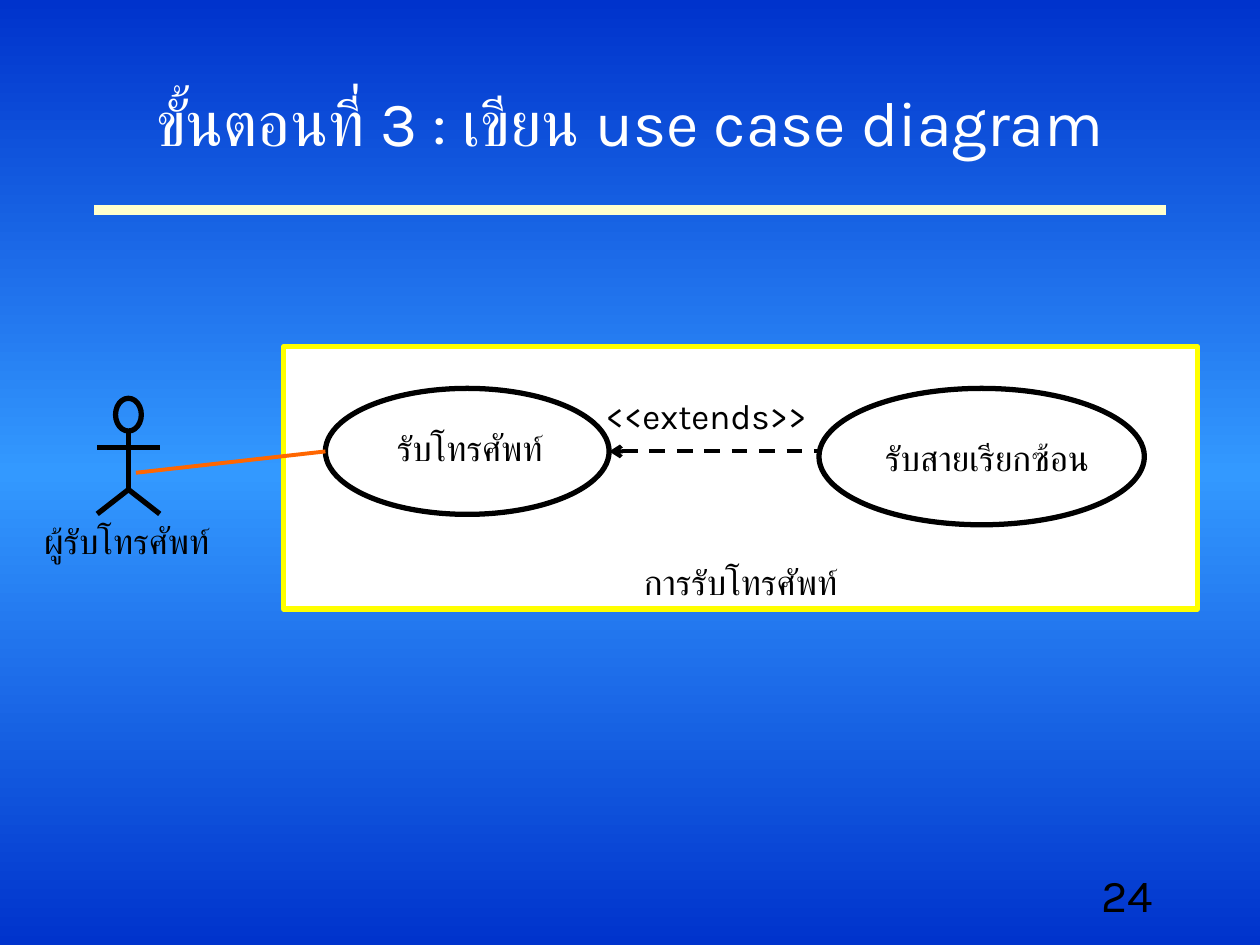
from copy import deepcopy
from pptx import Presentation
from pptx.dml.color import RGBColor
from pptx.enum.dml import MSO_LINE
from pptx.enum.shapes import MSO_CONNECTOR, MSO_SHAPE
from pptx.enum.text import MSO_ANCHOR, PP_ALIGN
from pptx.oxml.ns import qn
from pptx.util import Cm, Pt
from lxml.etree import SubElement

HUE = {"edge": "0033CC", "mid": "3399FF", "rule": "FFFFCC", "ink": "000000",
       "paper": "FFFFFF", "frame": "FFFF00", "link": "FF6600"}


def put(shape, text, size=20, hue="ink", align=PP_ALIGN.CENTER, wrap=False):
    frame = shape.text_frame
    frame.word_wrap = wrap
    para = frame.paragraphs[0]
    para.alignment = align
    run = para.add_run()
    run.text = text
    run.font.name = "Karla"
    run.font.size = Pt(size)
    run.font.color.rgb = RGBColor.from_string(HUE[hue])


def draw(x1, y1, x2, y2, hue="ink", width=3):
    line = slide.shapes.add_connector(
        MSO_CONNECTOR.STRAIGHT, Cm(x1), Cm(y1), Cm(x2), Cm(y2))
    line.line.color.rgb = RGBColor.from_string(HUE[hue])
    line.line.width = Pt(width)
    SubElement(line._element.spPr, qn("a:effectLst"))
    return line


deck = Presentation()
deck.slide_width, deck.slide_height = Cm(25.4), Cm(19.05)
slide = deck.slides.add_slide(deck.slide_layouts[5])

# Background: dark at both ends, light in the middle
fill = slide.background.fill
fill.gradient()
fill.gradient_angle = 270
first = fill.gradient_stops[0]._gs
first.addnext(deepcopy(first))
for stop, hue, pos in zip(fill.gradient_stops, ("edge", "mid", "edge"), (0, 0.5, 1)):
    stop.color.rgb = RGBColor.from_string(HUE[hue])
    stop.position = pos

# Title, rule and page number
draw(1.9, 4.23, 23.5, 4.23, "rule", 6)
title = slide.shapes.title
title.left, title.top, title.width, title.height = Cm(1.9), Cm(0.85), Cm(21.6), Cm(3.18)
title.text_frame.vertical_anchor = MSO_ANCHOR.MIDDLE
put(title, "ขั้นตอนที่ 3 : เขียน use case diagram", 36, "paper", wrap=True)
page = slide.shapes.add_textbox(Cm(18.2), Cm(17.36), Cm(5.3), Cm(1.27))
put(page, "24", 26, align=PP_ALIGN.RIGHT, wrap=True)

# System frame, use cases and the actor's head
shapes = [
    (MSO_SHAPE.RECTANGLE, 5.72, 6.99, 18.42, 5.29, "paper", "frame"),
    (MSO_SHAPE.OVAL, 6.56, 7.83, 5.72, 2.54, None, "ink"),
    (MSO_SHAPE.OVAL, 16.51, 7.83, 6.56, 2.75, None, "ink"),
    (MSO_SHAPE.OVAL, 2.33, 8.03, 0.52, 0.66, None, "ink"),
]
for kind, x, y, w, h, inner, outer in shapes:
    shape = slide.shapes.add_shape(kind, Cm(x), Cm(y), Cm(w), Cm(h))
    shape.shadow.inherit = False
    shape.line.color.rgb = RGBColor.from_string(HUE[outer])
    shape.line.width = Pt(3)
    if inner:
        shape.fill.solid()
        shape.fill.fore_color.rgb = RGBColor.from_string(HUE[inner])
        shape.text_frame.vertical_anchor = MSO_ANCHOR.BOTTOM
        put(shape, "การรับโทรศัพท์")
    else:
        shape.fill.background()

# Actor's trunk, arms and legs
mid, left, right, hip, foot = 2.59, 1.96, 3.22, 9.87, 10.36
draw(mid, 8.69, mid, hip)
draw(left, 9.02, right, 9.02)
for x in (left, right):
    draw(mid, hip, x, foot)

# Labels
labels = [
    ("รับโทรศัพท์", 7.54, 8.47, 3.86, PP_ALIGN.CENTER),
    ("รับสายเรียกซ้อน", 17.32, 8.68, 5.16, PP_ALIGN.CENTER),
    ("ผู้รับโทรศัพท์", 0.41, 10.34, 4.29, PP_ALIGN.CENTER),
    ("<<extends>>", 11.96, 7.83, 4.98, PP_ALIGN.LEFT),
]
for text, x, y, w, align in labels:
    put(slide.shapes.add_textbox(Cm(x), Cm(y), Cm(w), Cm(1.09)), text, align=align)

# Links
draw(2.74, 9.53, 6.56, 9.1, "link", 2.25)
arrow = draw(12.28, 9.1, 16.51, 9.1, width=2.25)
arrow.line.dash_style = MSO_LINE.DASH
SubElement(arrow.line._get_or_add_ln(), qn("a:headEnd"), type="arrow")

deck.save("out.pptx")
